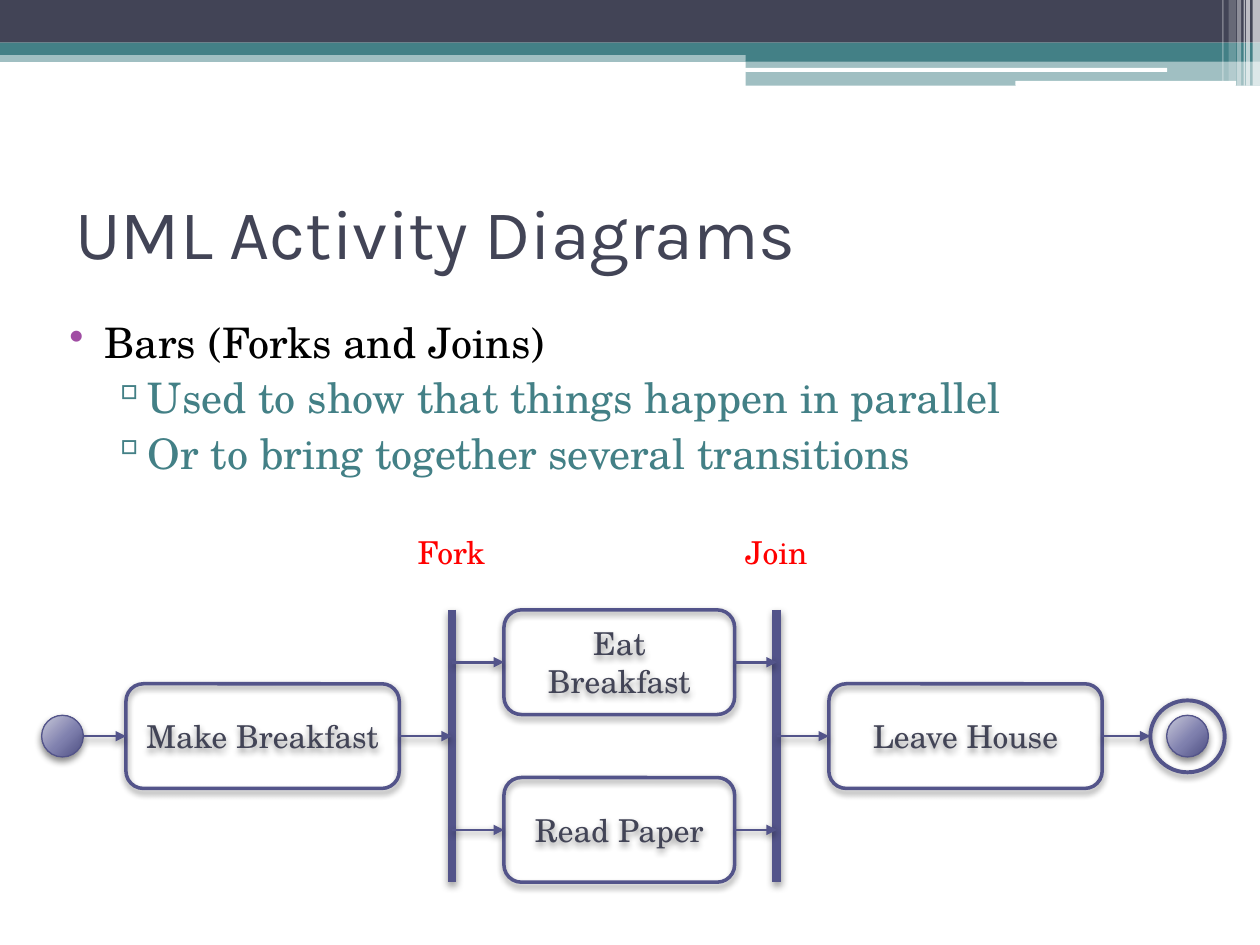
from typing import NamedTuple, Optional

from lxml import etree
from pptx import Presentation
from pptx import util as u
from pptx.dml.color import RGBColor
from pptx.enum import shapes as kinds
from pptx.enum import text as t
from pptx.oxml import ns, parse_xml

SLATE = RGBColor(0x42, 0x44, 0x56)
TEAL = RGBColor(0x43, 0x80, 0x86)
INDIGO = RGBColor(0x53, 0x54, 0x8A)
PURPLE = RGBColor(0xA0, 0x4D, 0xA3)
WHITE = RGBColor(0xFF, 0xFF, 0xFF)
BLACK = RGBColor(0, 0, 0)
RED = RGBColor(0xFF, 0, 0)
BALL_STOPS = ((0, "C9C9DA"), (55, "7F80AE"), (100, "4D4E81"))

HEADING_FONT = "Karla"
BODY_FONT = "TeX Gyre Schola"
RECT = kinds.MSO_SHAPE.RECTANGLE
ROUNDED = kinds.MSO_SHAPE.ROUNDED_RECTANGLE
OVAL = kinds.MSO_SHAPE.OVAL
CENTER = t.PP_ALIGN.CENTER

PAGE_WIDTH = 25.4
NODE_HEIGHT = 2.11
MIDDLE, UPPER, LOWER = 14.84, 13.35, 16.73
FORK_X, JOIN_X = 9.11, 15.66
BAR_TOP, BAR_BOTTOM = 12.29, 17.78
BALL = 0.84


class Area(NamedTuple):
    left: float
    top: float
    width: float
    height: float

    def lengths(self) -> list:
        return [u.Cm(value) for value in self]


class Band(NamedTuple):
    area: Area
    color: RGBColor
    opacity: int = 100
    kind: int = RECT


class Stripe(NamedTuple):
    left: float
    width: float
    height: float
    opacity: int


class Node(NamedTuple):
    label: str
    left: float
    middle: float
    width: float


class Arrow(NamedTuple):
    start: float
    end: float
    y: float


class Bullet(NamedTuple):
    text: str
    level: int
    mark: str
    mark_color: RGBColor
    color: RGBColor
    margin: float
    hang: float


BANDS = [
    Band(Area(0, 1.02, PAGE_WIDTH, 0.23), TEAL, 50),
    Band(Area(0, 0, PAGE_WIDTH, 0.86), SLATE),
    Band(Area(0, 0.86, PAGE_WIDTH, 0.25), TEAL),
    Band(Area(15.03, 0.99, 10.37, 0.25), TEAL),
    Band(Area(15.03, 1.22, 10.37, 0.51), TEAL, 50),
    Band(Area(15.02, 1.37, 8.51, 0.08), WHITE, 100, ROUNDED),
    Band(Area(20.47, 1.63, 4.45, 0.1), WHITE, 100, ROUNDED),
]
STRIPES = [
    Stripe(25.25, 0.15, 1.73, 65),
    Stripe(25.12, 0.08, 1.73, 65),
    Stripe(25.07, 0.03, 1.73, 60),
    Stripe(24.94, 0.08, 1.73, 40),
    Stripe(24.77, 0.15, 1.63, 20),
    Stripe(24.64, 0.03, 1.63, 30),
]
NODES = [
    Node("Make Breakfast", 2.54, MIDDLE, 5.51),
    Node("Leave House", 16.71, MIDDLE, 5.51),
    Node("Eat Breakfast", 10.16, UPPER, 4.65),
    Node("Read Paper", 10.16, LOWER, 4.65),
]
ARROWS = [
    Arrow(1.69, 2.54, MIDDLE),
    Arrow(8.05, FORK_X, MIDDLE),
    Arrow(JOIN_X, 16.71, MIDDLE),
    Arrow(22.22, 23.19, MIDDLE),
    Arrow(FORK_X, 10.16, UPPER),
    Arrow(FORK_X, 10.16, LOWER),
    Arrow(14.81, JOIN_X, UPPER),
    Arrow(14.81, JOIN_X, LOWER),
]
BULLETS = [
    Bullet("Bars (Forks and Joins)", 0, "•", PURPLE, BLACK, 1.02, 0.71),
    Bullet("Used to show that things happen in parallel", 1, "▫", TEAL, TEAL, 1.83, 0.69),
    Bullet("Or to bring together several transitions", 1, "▫", TEAL, TEAL, 1.83, 0.69),
]


def write(para, text: str, *, size: float, color: RGBColor,
          font: str = BODY_FONT, align=None) -> None:
    para.alignment = align
    span = para.add_run()
    span.text = text
    span.font.name = font
    span.font.size = u.Pt(size)
    span.font.color.rgb = color


def add_shadow(item, opacity: int, blur: float) -> None:
    properties = item._element.spPr
    effects = properties.find(ns.qn("a:effectLst"))
    if effects is None:
        effects = etree.SubElement(properties, ns.qn("a:effectLst"))
    shadow = etree.SubElement(
        effects, ns.qn("a:outerShdw"), blurRad=str(u.Pt(blur)), dist=str(u.Pt(2)),
        dir="5400000", algn="ctr", rotWithShape="0")
    tint = etree.SubElement(shadow, ns.qn("a:srgbClr"), val=str(BLACK))
    etree.SubElement(tint, ns.qn("a:alpha"), val=str(opacity * 1000))


def add_band(page, band: Band) -> None:
    box = page.shapes.add_shape(band.kind, *band.area.lengths())
    box.shadow.inherit = False
    box.line.fill.background()
    box.fill.solid()
    box.fill.fore_color.rgb = band.color
    if band.opacity < 100:
        tint = box._element.spPr.find(ns.qn("a:solidFill"))[0]
        etree.SubElement(tint, ns.qn("a:alpha"), val=str(band.opacity * 1000))


def add_outline(page, kind: int, area: Area, weight: float):
    box = page.shapes.add_shape(kind, *area.lengths())
    box.fill.background()
    box.line.color.rgb = INDIGO
    box.line.width = u.Pt(weight)
    box.shadow.inherit = False
    add_shadow(box, 45, 4)
    return box


def add_node(page, node: Node) -> None:
    area = Area(node.left, node.middle - NODE_HEIGHT / 2, node.width, NODE_HEIGHT)
    frame = add_outline(page, ROUNDED, area, 2).text_frame
    frame.word_wrap = True
    frame.vertical_anchor = t.MSO_ANCHOR.MIDDLE
    write(frame.paragraphs[0], node.label, size=18, color=SLATE, align=CENTER)


def add_ball(page, left: float) -> None:
    ball = add_outline(page, OVAL, Area(left, MIDDLE - BALL / 2, BALL, BALL), 0.75)
    stops = "".join(f'<a:gs pos="{place * 1000}"><a:srgbClr val="{tint}"/></a:gs>'
                    for place, tint in BALL_STOPS)
    gradient = parse_xml(
        f'<a:gradFill {ns.nsdecls("a")}><a:gsLst>{stops}</a:gsLst><a:path path="circle">'
        '<a:fillToRect l="-40000" t="-90000" r="140000" b="190000"/></a:path></a:gradFill>')
    properties = ball._element.spPr
    properties.replace(properties.find(ns.qn("a:noFill")), gradient)


def add_line(page, x1: float, y1: float, x2: float, y2: float,
             weight: float, head: Optional[str] = None) -> None:
    line = page.shapes.add_connector(
        kinds.MSO_CONNECTOR.STRAIGHT, *[u.Cm(value) for value in (x1, y1, x2, y2)])
    line.line.color.rgb = INDIGO
    line.line.width = u.Pt(weight)
    if head:
        etree.SubElement(line.line._get_or_add_ln(), ns.qn("a:tailEnd"), type=head)
    add_shadow(line, 40, 4.1)


def add_text_frame(page, area: Area, anchor=t.MSO_ANCHOR.TOP):
    frame = page.shapes.add_textbox(*area.lengths()).text_frame
    frame.word_wrap = True
    frame.vertical_anchor = anchor
    return frame


def add_bullet(para, bullet: Bullet) -> None:
    write(para, bullet.text, size=24, color=bullet.color)
    para.level = bullet.level
    para.space_before = u.Pt(3)
    properties = para._p.get_or_add_pPr()
    properties.set("marL", str(u.Cm(bullet.margin)))
    properties.set("indent", str(-u.Cm(bullet.hang)))
    tint = etree.SubElement(properties, ns.qn("a:buClr"))
    etree.SubElement(tint, ns.qn("a:srgbClr"), val=str(bullet.mark_color))
    etree.SubElement(properties, ns.qn("a:buChar"), char=bullet.mark)


def main() -> None:
    deck = Presentation()
    deck.slide_width, deck.slide_height = u.Cm(PAGE_WIDTH), u.Cm(19.05)
    page = deck.slides.add_slide(deck.slide_layouts[6])

    for band in BANDS:
        add_band(page, band)
    for stripe in STRIPES:
        area = Area(stripe.left, 0, stripe.width, stripe.height)
        add_band(page, Band(area, WHITE, stripe.opacity))

    title = add_text_frame(page, Area(1.27, 3.18, 22.86, 2.97), t.MSO_ANCHOR.MIDDLE)
    write(title.paragraphs[0], "UML Activity Diagrams", size=40, color=SLATE, font=HEADING_FONT)

    for node in NODES:
        add_node(page, node)
    add_ball(page, 0.84)
    add_outline(page, OVAL, Area(23.19, 14.12, 1.5, 1.45), 2.25)
    add_ball(page, 23.52)
    for x in (FORK_X, JOIN_X):
        add_line(page, x, BAR_TOP, x, BAR_BOTTOM, 5)
    for arrow in ARROWS:
        add_line(page, arrow.start, arrow.y, arrow.end, arrow.y, 1.5, "triangle")

    body = add_text_frame(page, Area(0.84, 6.25, 24.33, 4.55))
    for index, bullet in enumerate(BULLETS):
        add_bullet(body.add_paragraph() if index else body.paragraphs[0], bullet)
    for label, x in (("Fork", FORK_X), ("Join", JOIN_X)):
        frame = add_text_frame(page, Area(x - 1.28, 10.62, 2.54, 1.02))
        write(frame.paragraphs[0], label, size=18, color=RED, align=CENTER)

    deck.save("out.pptx")


if __name__ == "__main__":
    main()
